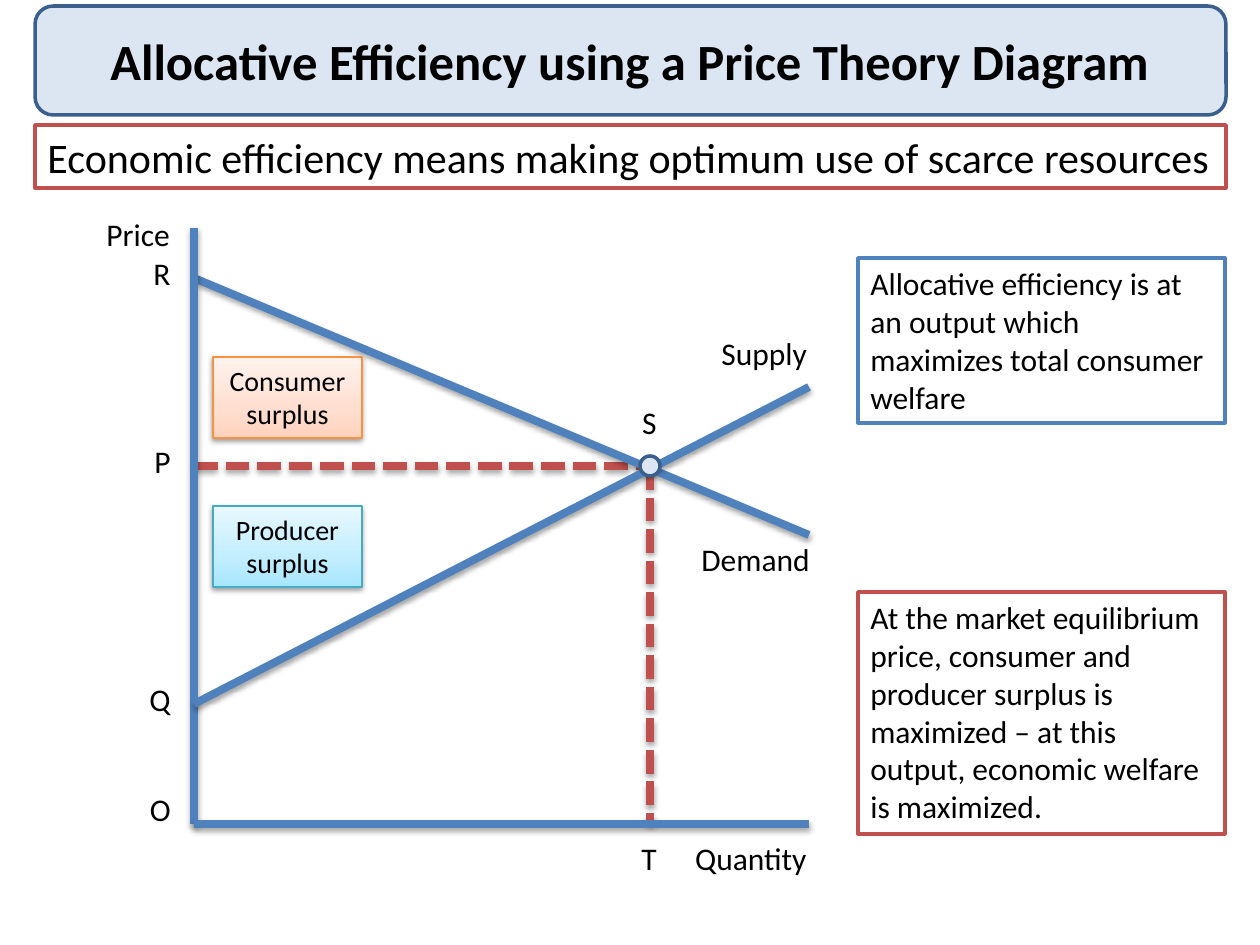
from lxml.etree import SubElement
from pptx import Presentation
from pptx.dml.color import RGBColor
from pptx.enum.dml import MSO_LINE
from pptx.enum.shapes import MSO_CONNECTOR, MSO_SHAPE
from pptx.enum.text import MSO_ANCHOR, MSO_AUTO_SIZE, PP_ALIGN
from pptx.oxml.ns import qn
from pptx.util import Emu, Pt

FONT = "Calibri"
BLACK = RGBColor(0x00, 0x00, 0x00)
WHITE = RGBColor(0xFF, 0xFF, 0xFF)
BLUE = RGBColor(0x4F, 0x81, 0xBD)
DARK_BLUE = RGBColor(0x3A, 0x5F, 0x8C)
PALE_BLUE = RGBColor(0xDC, 0xE6, 0xF2)
RED = RGBColor(0xC0, 0x50, 0x4D)
ORANGE = RGBColor(0xF6, 0x92, 0x40)
TEAL = RGBColor(0x46, 0xAA, 0xC5)
ORANGE_TINTS = (RGBColor(0xFF, 0xD2, 0xBD), RGBColor(0xFF, 0xDE, 0xD0), RGBColor(0xFF, 0xF2, 0xED))
TEAL_TINTS = (RGBColor(0xA7, 0xE6, 0xFF), RGBColor(0xC1, 0xED, 0xFF), RGBColor(0xE7, 0xF8, 0xFF))
TINT_STOPS = (0, 35, 100)

# Diagram coordinates in px
AXIS_X, AXIS_TOP, AXIS_Y, AXIS_RIGHT = 194, 228, 824, 809
EQ_X, EQ_Y = 650, 466
DEMAND_START, DEMAND_END = 278, 535
SUPPLY_START, SUPPLY_END = 704, 387
POINT_SIZE = 20
LABEL_H = 50
LETTER_W = 49


def px(n):
    return Emu(round(n * 914400 / 126))


def add_shadow(effects, alpha, distance):
    """Put a soft black downward shadow into an a:effectLst."""
    shadow = SubElement(effects, qn("a:outerShdw"), blurRad=str(Pt(3.1)),
                        dist=str(Pt(distance)), dir="5400000", rotWithShape="0")
    color = SubElement(shadow, qn("a:srgbClr"), val=str(BLACK))
    SubElement(color, qn("a:alpha"), val=str(alpha * 1000))


def add_line(slide, x1, y1, x2, y2, color=BLUE, dash=None):
    line = slide.shapes.add_connector(MSO_CONNECTOR.STRAIGHT, px(x1), px(y1), px(x2), px(y2))
    line.line.color.rgb = color
    line.line.width = Pt(4.5)
    if dash:
        line.line.dash_style = dash
    add_shadow(SubElement(line._element.spPr, qn("a:effectLst")), 35, 1.8)


def set_text(s, text, size, align=PP_ALIGN.LEFT, bold=False):
    tf = s.text_frame
    tf.word_wrap = True
    tf.text = text
    p = tf.paragraphs[0]
    p.alignment = align
    font = p.runs[0].font
    font.name = FONT
    font.size = Pt(size)
    font.bold = bold
    font.color.rgb = BLACK


def add_shape(slide, kind, x, y, w, h, line, fill=WHITE, line_width=2):
    s = slide.shapes.add_shape(kind, px(x), px(y), px(w), px(h))
    s.shadow.inherit = False
    s.fill.solid()
    s.fill.fore_color.rgb = fill
    s.line.color.rgb = line
    s.line.width = Pt(line_width)
    return s


def add_note(slide, x, y, w, h, line, text, size=18):
    s = add_shape(slide, MSO_SHAPE.RECTANGLE, x, y, w, h, line)
    set_text(s, text, size)
    s.text_frame.vertical_anchor = MSO_ANCHOR.TOP
    s.text_frame.auto_size = MSO_AUTO_SIZE.SHAPE_TO_FIT_TEXT


def add_surplus(slide, y, line, tints, text):
    """Add a shadowed surplus tag, shaded from its first tint at the bottom."""
    s = add_shape(slide, MSO_SHAPE.RECTANGLE, 213, y, 149, 81, line, line_width=0.75)
    s.fill.gradient()
    s.fill.gradient_angle = 90
    spPr = s._element.spPr
    stops = spPr.find(".//" + qn("a:gsLst"))
    stops.clear()
    for position, tint in zip(TINT_STOPS, tints):
        stop = SubElement(stops, qn("a:gs"), pos=str(position * 1000))
        SubElement(stop, qn("a:srgbClr"), val=str(tint))
    add_shadow(spPr.find(qn("a:effectLst")), 38, 1.6)
    set_text(s, text, 16, PP_ALIGN.CENTER)
    s.text_frame.vertical_anchor = MSO_ANCHOR.TOP


def add_label(slide, x, y, w, text, align=PP_ALIGN.LEFT):
    s = slide.shapes.add_textbox(px(x), px(y), px(w), px(LABEL_H))
    set_text(s, text, 18, align)
    s.text_frame.auto_size = MSO_AUTO_SIZE.SHAPE_TO_FIT_TEXT


def add_header(slide):
    title = add_shape(slide, MSO_SHAPE.ROUNDED_RECTANGLE, 35, 6, 1191, 109, DARK_BLUE, PALE_BLUE)
    set_text(title, "Allocative Efficiency using a Price Theory Diagram", 29, PP_ALIGN.CENTER, True)
    title.text_frame.vertical_anchor = MSO_ANCHOR.MIDDLE
    add_note(slide, 35, 125, 1191, 63, RED,
             "Economic efficiency means making optimum use of scarce resources", 24)


def add_diagram(slide):
    add_line(slide, EQ_X, EQ_Y, EQ_X, AXIS_Y, RED, MSO_LINE.SQUARE_DOT)
    add_line(slide, AXIS_X, EQ_Y, EQ_X, EQ_Y, RED, MSO_LINE.SQUARE_DOT)
    add_line(slide, AXIS_X, DEMAND_START, AXIS_RIGHT, DEMAND_END)
    add_line(slide, AXIS_X, AXIS_TOP, AXIS_X, AXIS_Y)
    add_line(slide, AXIS_X, AXIS_Y, AXIS_RIGHT, AXIS_Y)
    add_line(slide, AXIS_X, SUPPLY_START, AXIS_RIGHT, SUPPLY_END)

    add_label(slide, 94, 209, 89, "Price")
    add_label(slide, 640, 833, 179, "Quantity", PP_ALIGN.RIGHT)
    add_label(slide, 689, 534, 169, "Demand")
    add_label(slide, 709, 328, 169, "Supply")
    for letter, x, y in (("R", 134, 248), ("P", 134, 436), ("Q", 134, 674), ("O", 134, 784),
                         ("S", 620, 397), ("T", 620, 833)):
        add_label(slide, x, y, LETTER_W, letter, PP_ALIGN.RIGHT)

    add_surplus(slide, 506, TEAL, TEAL_TINTS, "Producer surplus")
    add_surplus(slide, 357, ORANGE, ORANGE_TINTS, "Consumer surplus")
    add_shape(slide, MSO_SHAPE.OVAL, EQ_X - POINT_SIZE // 2, EQ_Y - POINT_SIZE // 2,
              POINT_SIZE, POINT_SIZE, DARK_BLUE, PALE_BLUE)


def main():
    prs = Presentation()
    prs.slide_width = px(1260)
    prs.slide_height = px(945)
    slide = prs.slides.add_slide(prs.slide_layouts[6])
    add_header(slide)
    add_diagram(slide)
    add_note(slide, 858, 258, 367, 165, BLUE,
             "Allocative efficiency is at an output which maximizes total consumer welfare")
    add_note(slide, 858, 592, 367, 242, RED,
             "At the market equilibrium price, consumer and producer surplus is maximized "
             "– at this output, economic welfare is maximized.")
    prs.save("out.pptx")


if __name__ == "__main__":
    main()
